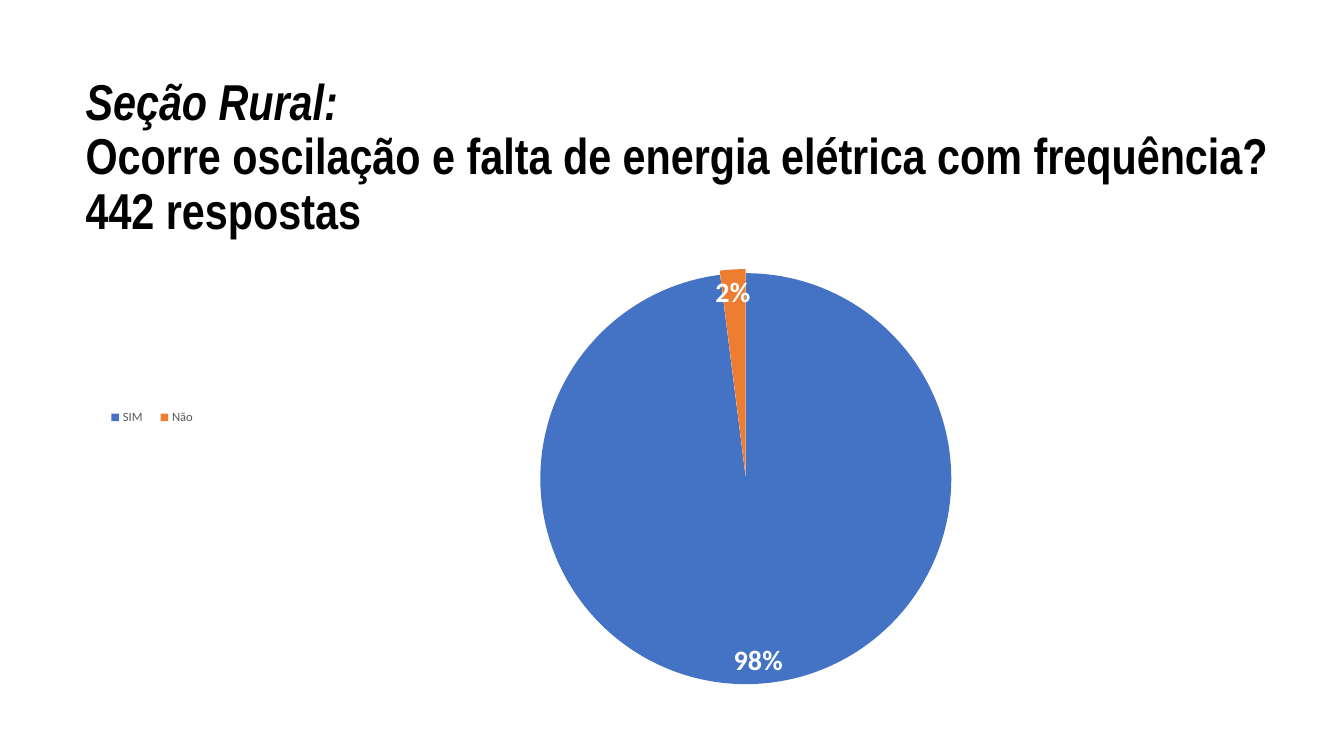
from dataclasses import dataclass

from lxml import etree
from pptx import Presentation
from pptx.chart.data import CategoryChartData
from pptx.dml.color import RGBColor as RGB
from pptx.enum.chart import XL_CHART_TYPE as CT, XL_LABEL_POSITION as LP, XL_LEGEND_POSITION as LG
from pptx.enum.text import MSO_ANCHOR as ANCHOR
from pptx.oxml.ns import qn
from pptx.util import Pt


@dataclass(frozen=True)
class Theme:
    title_font: str = "Arial Narrow"
    chart_font: str = "Calibri"
    title_size: int = 36
    label_size: int = 20
    legend_size: int = 9
    chart_size: int = 10
    ink: str = "000000"
    white: str = "FFFFFF"
    muted: str = "595959"
    slices: tuple = ("4472C4", "ED7D31")


THEME = Theme()


def set_font(font, name, size, color, bold=False, italic=False):
    font.name, font.size = name, Pt(size)
    font.bold, font.italic = bold, italic
    font.color.rgb = RGB.from_string(color)


def add_run(p, text, **fmt):
    r = p.add_run()
    r.text = text
    set_font(r.font, **fmt)


def add_title(slide, box, lines):
    """Add bottom-anchored lines, the first of them in italics."""
    tf = slide.shapes.add_textbox(*map(Pt, box)).text_frame
    tf.word_wrap = True
    tf.vertical_anchor = ANCHOR.BOTTOM
    p = tf.paragraphs[0]
    p.line_spacing = 0.9
    for i, line in enumerate(lines):
        if i:
            p.add_line_break()
        add_run(p, line, name=THEME.title_font, size=THEME.title_size,
                color=THEME.ink, bold=True, italic=i == 0)


def set_layout(parent, index, box, inner=False):
    """Place a chart part by fractions of the chart area."""
    for old in parent.findall(qn("c:layout")):
        parent.remove(old)
    layout = etree.Element(qn("c:layout"))
    manual = etree.SubElement(layout, qn("c:manualLayout"))
    items = [("layoutTarget", "inner")] if inner else []
    items += [("xMode", "edge"), ("yMode", "edge"), *zip("xywh", box)]
    for tag, val in items:
        etree.SubElement(manual, qn(f"c:{tag}")).set("val", str(val))
    parent.insert(index, layout)


def add_pie(slide, box, values):
    data = CategoryChartData()
    data.categories = list(values)
    data.add_series("Series 1", list(values.values()))
    chart = slide.shapes.add_chart(CT.PIE, *map(Pt, box), data).chart
    chart.has_title = False
    set_font(chart.font, THEME.chart_font, THEME.chart_size, THEME.ink)

    chart.has_legend = True
    legend = chart.legend
    legend.position = LG.TOP
    legend.include_in_layout = False
    set_font(legend.font, THEME.chart_font, THEME.legend_size, THEME.muted)
    set_layout(legend._element, 1, (0.01, 0.34, 0.1, 0.08))
    plot_area = chart._chartSpace.chart.plotArea
    set_layout(plot_area, 0, (0.4, 0.08, 0.41, 0.84), inner=True)

    plot = chart.plots[0]
    plot.vary_by_categories = True
    series = plot.series[0]
    series.format.line.fill.background()
    explosion = etree.Element(qn("c:explosion"))
    explosion.set("val", "1")
    series._element.get_or_add_spPr().addnext(explosion)
    for i, color in enumerate(THEME.slices):
        fmt = series.points[i].format
        fmt.fill.solid()
        fmt.fill.fore_color.rgb = RGB.from_string(color)
        fmt.line.fill.background()

    labels = series.data_labels
    labels.show_value = False
    labels.show_percentage = True
    labels.number_format, labels.number_format_is_linked = "0%", False
    labels.position = LP.INSIDE_END
    set_font(labels.font, THEME.chart_font, THEME.label_size, THEME.white, bold=True)


def main():
    prs = Presentation()
    prs.slide_width, prs.slide_height = Pt(960), Pt(540)
    slide = prs.slides.add_slide(prs.slide_layouts[6])
    add_title(slide, (54, 35, 871, 140), (
        "Seção Rural:",
        "Ocorre oscilação e falta de energia elétrica com frequência?",
        "442 respostas",
    ))
    add_pie(slide, (62, 164, 778, 353), {"SIM": 98, "Não": 2})
    prs.save("out.pptx")


if __name__ == "__main__":
    main()
